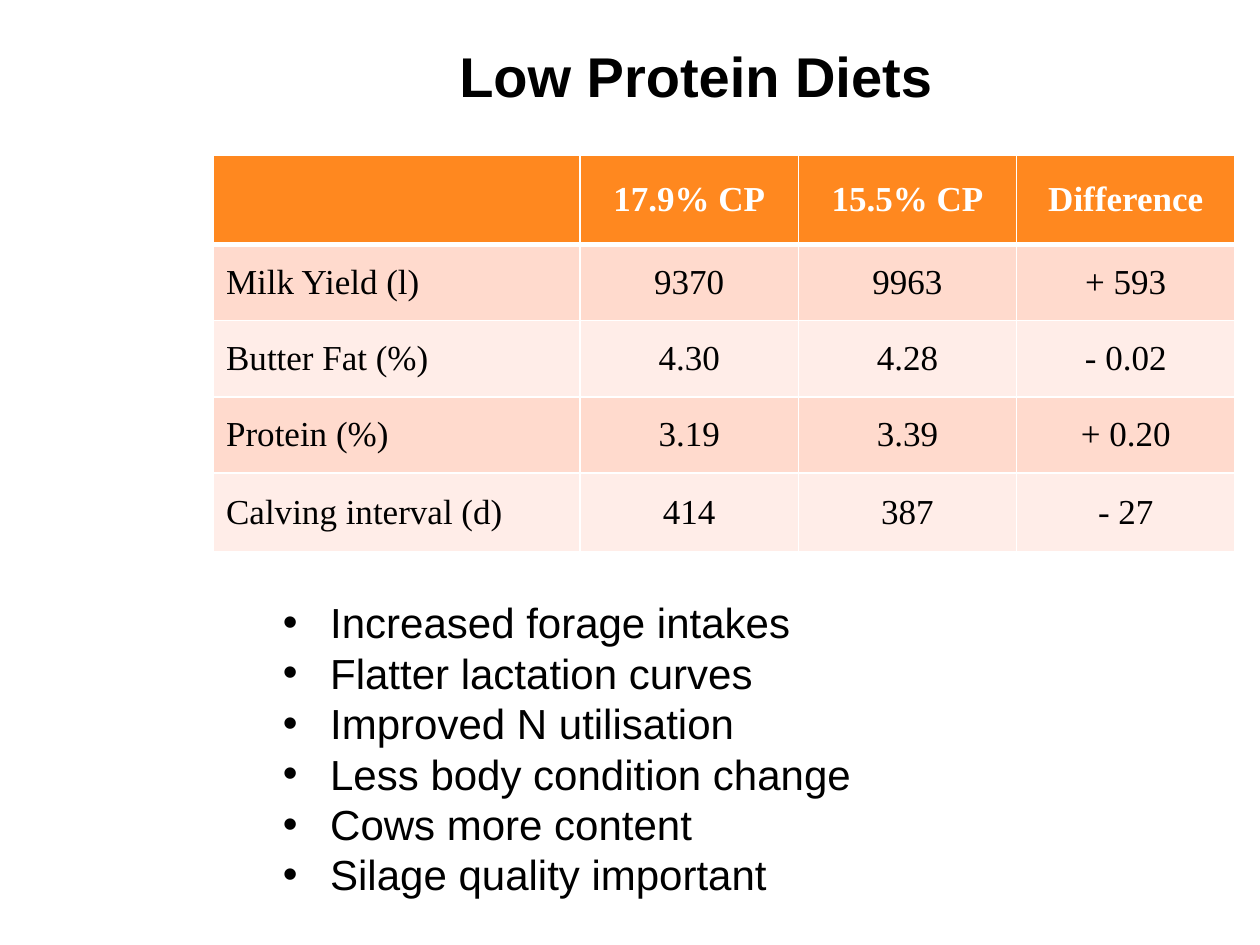
from lxml import etree
from pptx import Presentation
from pptx.dml.color import RGBColor
from pptx.enum import text
from pptx.oxml import ns
from pptx.util import Pt

HUES = {"ink": "000000", "white": "FFFFFF", "head": "FF881F",
        "odd": "FFDACD", "even": "FFEDE8"}
ROWS = [
    ["", "17.9% CP", "15.5% CP", "Difference"],
    ["Milk Yield (l)", "9370", "9963", "+ 593"],
    ["Butter Fat (%)", "4.30", "4.28", "- 0.02"],
    ["Protein (%)", "3.19", "3.39", "+ 0.20"],
    ["Calving interval (d)", "414", "387", "- 27"],
]
POINTS = ["Increased forage intakes", "Flatter lactation curves",
          "Improved N utilisation", "Less body condition change",
          "Cows more content", "Silage quality important"]
LEFT, MID = text.PP_ALIGN.LEFT, text.PP_ALIGN.CENTER


def rgb(hue):
    return RGBColor.from_string(HUES[hue])


def write(frame, lines, size=24, face="Arial", hue="ink", bold=False,
          align=LEFT, indent=0):
    for i, line in enumerate(lines):
        para = frame.paragraphs[0] if i == 0 else frame.add_paragraph()
        para.alignment = align
        if indent:
            props = para._p.get_or_add_pPr()
            props.set("marL", str(Pt(indent)))
            props.set("indent", str(-Pt(indent)))
            etree.SubElement(props, ns.qn("a:buFont"), typeface="Arial")
            etree.SubElement(props, ns.qn("a:buChar"), char="•")
        run = para.add_run()
        run.text = line
        font = run.font
        font.size, font.name, font.bold = Pt(size), face, bold
        font.color.rgb = rgb(hue)


class Deck:
    def __init__(self, wide, high):
        self.show = Presentation()
        self.show.slide_width, self.show.slide_height = Pt(wide), Pt(high)
        self.slide = self.show.slides.add_slide(self.show.slide_layouts[6])

    def label(self, box, lines, **style):
        frame = self.slide.shapes.add_textbox(*map(Pt, box)).text_frame
        frame.word_wrap = False
        frame.auto_size = text.MSO_AUTO_SIZE.SHAPE_TO_FIT_TEXT
        write(frame, lines, **style)

    def edge(self, cell, side, width):
        props = cell._tc.get_or_add_tcPr()
        line = etree.SubElement(props, ns.qn("a:ln" + side), w=str(Pt(width)))
        fill = etree.SubElement(line, ns.qn("a:solidFill"))
        etree.SubElement(fill, ns.qn("a:srgbClr"), val=HUES["white"])

    def table(self, left, top, cols, highs, rows):
        grid = self.slide.shapes.add_table(
            len(rows), len(cols), Pt(left), Pt(top),
            Pt(sum(cols)), Pt(sum(highs))).table
        for col, wide in zip(grid.columns, cols):
            col.width = Pt(wide)
        for r, row in enumerate(rows):
            grid.rows[r].height = Pt(highs[r])
            for c, word in enumerate(row):
                self.cell(grid.cell(r, c), r, c, word)

    def cell(self, cell, r, c, word):
        for side in "LRTB":
            thick = (r, side) in ((0, "B"), (1, "T"))
            self.edge(cell, side, 3 if thick else 1)
        cell.fill.solid()
        cell.fill.fore_color.rgb = rgb(
            "head" if r == 0 else "odd" if r % 2 else "even")
        cell.vertical_anchor = text.MSO_ANCHOR.MIDDLE
        if word:
            write(cell.text_frame, [word], size=20, face="Times New Roman",
                  hue="ink" if r else "white", bold=r == 0,
                  align=MID if c else LEFT)


def main():
    deck = Deck(720, 540)
    deck.label((254, 20, 287.5, 46), ["Low Protein Diets"],
               size=32, bold=True, align=MID)
    deck.table(122, 88.8, [209.5] + [124.75] * 3,
               [51, 43.5, 43.5, 43.5, 45], ROWS)
    deck.label((154.6, 337.5, 343, 181.5), POINTS, indent=27)
    deck.show.save("out.pptx")


if __name__ == "__main__":
    main()
